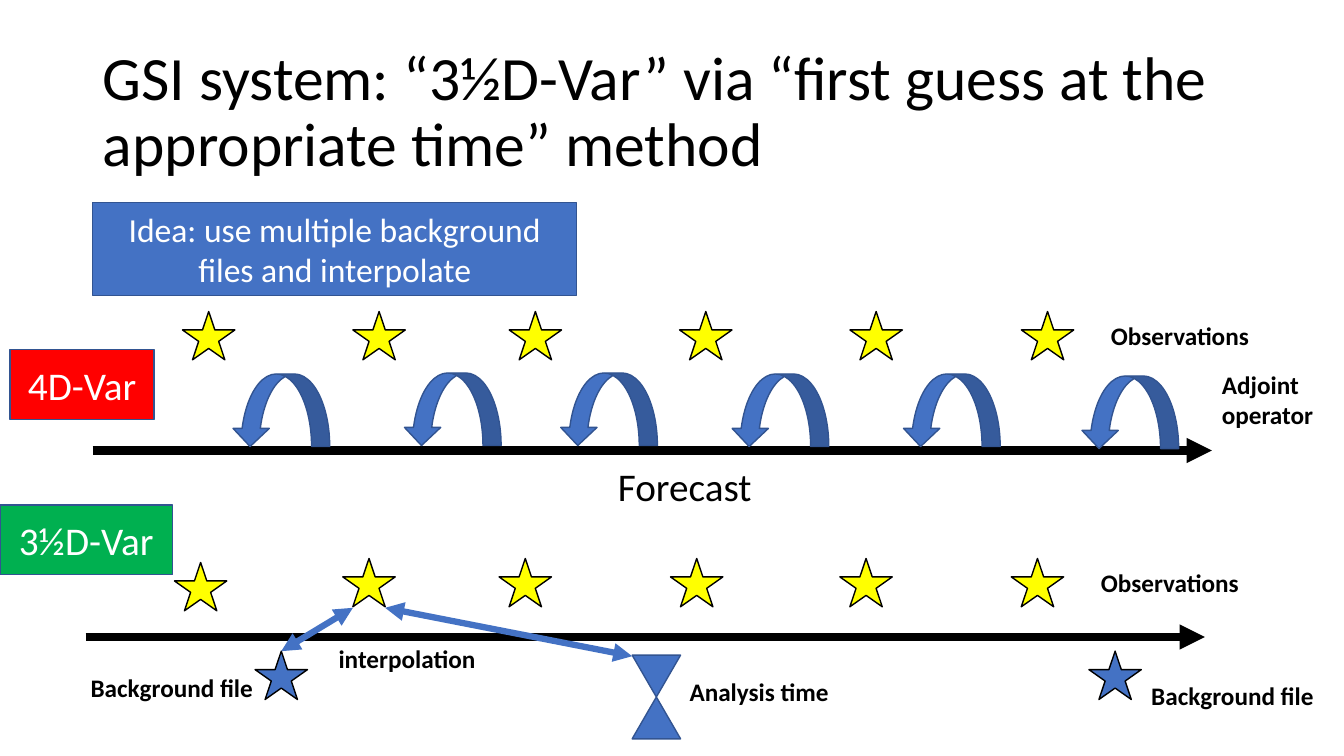
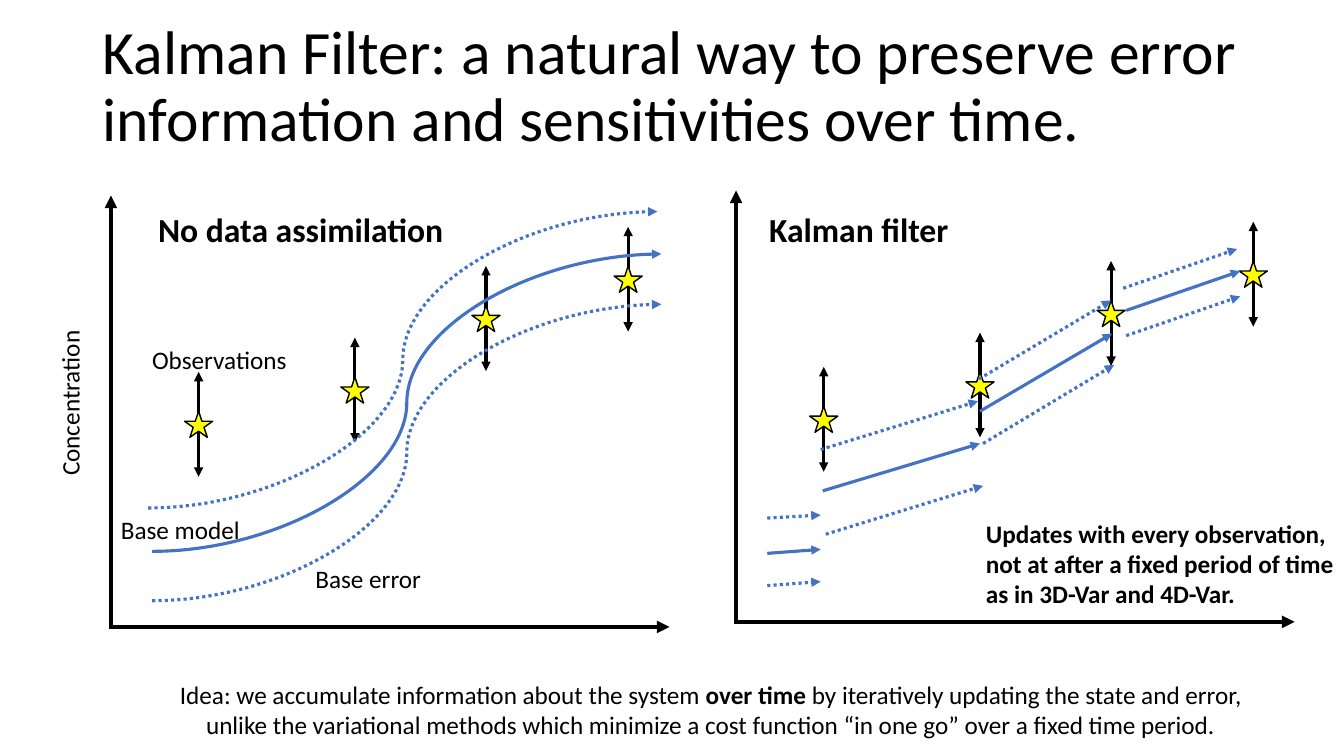
"""Build two slides on variational data assimilation and the Kalman filter."""
import pptx
import pptx.dml.color
import pptx.enum.dml
import pptx.enum.shapes
import pptx.enum.text
import pptx.oxml.ns
import pptx.util
from lxml import etree

Inches = pptx.util.Inches
Preset = pptx.enum.shapes.MSO_SHAPE
Connector = pptx.enum.shapes.MSO_CONNECTOR
Align = pptx.enum.text.PP_ALIGN
Anchor = pptx.enum.text.MSO_ANCHOR

FONT = "Calibri"
BLACK, WHITE, BLUE, NAVY = "000000", "FFFFFF", "4472C4", "325491"
YELLOW, RED, GREEN = "FFFF00", "FF0000", "00B050"

VAR_TITLE = "GSI system: “3½D-Var” via “first guess at the appropriate time” method"
VAR_BANNERS = [
    ("Idea: use multiple background files and interpolate", (0.92, 2.01, 4.8, 0.92), BLUE, 24),
    ("4D-Var", (0.1, 3.47, 1.43, 0.69), RED, 28),
    ("3½D-Var", (0, 5.01, 1.71, 0.69), GREEN, 28),
]
TIMELINES = [((0.92, 4.47), (12.02, 4.47)), ((0.85, 6.32), (11.95, 6.32))]
STAR_SIZE = (0.52, 0.48)
OBSERVATION_STARS = (
    [(left, 3.09) for left in (1.81, 3.5, 5.05, 6.74, 8.43, 10.13)]
    + [(1.73, 5.58)]
    + [(left, 5.54) for left in (3.4, 4.95, 6.65, 8.33, 10.03)]
)
BACKGROUND_STARS = [(2.53, 6.46), (10.8, 6.46)]
ADJOINT_ARROWS = [(2.3, 3.71), (4, 3.7), (5.55, 3.7), (7.25, 3.71), (8.95, 3.71), (10.72, 3.73)]
ANALYSIS_HOURGLASS = (6.27, 6.5, 0.48, 0.83)
INTERPOLATIONS = [((3.5, 6.03), (2.79, 6.46)), ((3.82, 6.03), (6.27, 6.51))]
VAR_LABELS = [
    (["Observations"], (10.92, 3.13, 1.58, 0.4), 18, True),
    (["Forecast"], (6.03, 4.54, 1.54, 0.57), 28, False),
    (["Adjoint", "operator"], (12.02, 3.61, 1.11, 0.71), 18, True),
    (["Observations"], (10.82, 5.58, 1.58, 0.4), 18, True),
    (["Analysis time"], (6.74, 6.66, 1.59, 0.4), 18, True),
    (["Background file"], (0.8, 6.62, 1.83, 0.4), 18, True),
    (["Background file"], (11.32, 6.7, 1.83, 0.4), 18, True),
    (["interpolation"], (3.26, 6.33, 1.57, 0.4), 18, True),
]

KALMAN_TITLE = ("Kalman Filter: a natural way to preserve error information "
                "and sensitivities over time.")
PANEL_OFFSETS = [(0, 0), (6.2, -0.05)]
AXES = [((1.1, 6.22), (1.1, 1.94)), ((1.08, 6.22), (6.64, 6.22))]
OBSERVATIONS = [(1.97, 4.21), (3.52, 3.87), (4.82, 3.16), (6.23, 2.77)]
ERROR_REACH = 0.52
SMALL_STAR = (0.28, 0.26)
BASE_CURVES = [
    ((1.51, 5.47), (6.56, 2.52), False),
    ((1.47, 5.04), (6.52, 2.1), True),
    ((1.51, 5.96), (6.56, 3.02), True),
]
FILTER_STEPS = [
    ((7.61, 5.49), (8.14, 5.45), False),
    ((8.16, 4.87), (9.72, 4.4), False),
    ((9.72, 4.08), (11.03, 3.31), False),
    ((11.17, 3.08), (12.3, 2.69), False),
    ((7.61, 5.14), (8.14, 5.11), True),
    ((7.61, 5.81), (8.14, 5.77), True),
    ((8.14, 4.46), (9.7, 3.98), True),
    ((8.19, 5.3), (9.75, 4.82), True),
    ((9.71, 3.76), (11.02, 2.98), True),
    ((9.75, 4.4), (11.05, 3.62), True),
    ((11.14, 2.86), (12.27, 2.47), True),
    ((11.17, 3.33), (12.3, 2.94), True),
]
KALMAN_LABELS = [
    (["Base model"], (1.1, 5.05, 1.39, 0.4), 18, False),
    (["Observations"], (1.41, 3.37, 1.55, 0.4), 18, False),
    (["Base error"], (3.03, 5.54, 1.26, 0.4), 18, False),
    (["No data assimilation"], (1.47, 2.02, 3.06, 0.5), 24, True),
    (["Kalman filter"], (7.53, 2.02, 2, 0.5), 24, True),
    (["Updates with every observation,", "not at after a fixed period of time",
      "as in 3D-Var and 4D-Var."], (9.68, 5.09, 3.69, 1.01), 18, True),
]
AXIS_LABEL = (["Concentration"], (-0.14, 3.79, 1.66, 0.4), 18, False)
SUMMARY_BOX = (1.47, 6.69, 11.16, 0.71)
SUMMARY = [
    ("Idea: we accumulate information about the system ", False),
    ("over time ", True),
    ("by iteratively updating the state and error, unlike the variational methods "
     "which minimize a cost function “in one go” over a fixed time period.", False),
]


def rgb(value):
    return pptx.dml.color.RGBColor.from_string(value)


def inches(values):
    return [Inches(value) for value in values]


def style(paragraph, size, color=BLACK, bold=None, align=Align.LEFT):
    paragraph.alignment = align
    font = paragraph.font
    font.name, font.size, font.bold = FONT, pptx.util.Pt(size), bold
    font.color.rgb = rgb(color)


def add_titled_slide(deck, title, top):
    slide = deck.slides.add_slide(deck.slide_layouts[5])
    heading = slide.shapes.title
    heading.left, heading.top, heading.width, heading.height = inches((0.92, top, 11.5, 1.45))
    heading.text_frame.text = title
    heading.text_frame.vertical_anchor = Anchor.MIDDLE
    paragraph = heading.text_frame.paragraphs[0]
    style(paragraph, 44)
    paragraph.line_spacing = 0.9
    return slide


def add_figure(slide, preset, box, fill, outline=NAVY):
    figure = slide.shapes.add_shape(preset, *inches(box))
    figure.shadow.inherit = False
    figure.fill.solid()
    figure.fill.fore_color.rgb = rgb(fill)
    figure.line.color.rgb = rgb(outline)
    figure.line.width = pptx.util.Pt(1)
    return figure


def add_star(slide, corner, size, fill=YELLOW):
    add_figure(slide, Preset.STAR_5_POINT, (*corner, *size), fill, BLACK)


def add_banner(slide, text, box, fill, size):
    frame = add_figure(slide, Preset.RECTANGLE, box, fill).text_frame
    frame.text = text
    frame.vertical_anchor = Anchor.MIDDLE
    style(frame.paragraphs[0], size, WHITE, align=Align.CENTER)


def add_label(slide, lines, box, size, bold):
    label = slide.shapes.add_textbox(*inches(box))
    frame = label.text_frame
    frame.word_wrap = False
    frame.auto_size = pptx.enum.text.MSO_AUTO_SIZE.SHAPE_TO_FIT_TEXT
    frame.text = "\n".join(lines)
    for paragraph in frame.paragraphs:
        style(paragraph, size, bold=bold)
    return label


def add_arrow(slide, start, end, color, width, kind=Connector.STRAIGHT, dotted=False, double=False):
    arrow = slide.shapes.add_connector(kind, *inches((*start, *end)))
    arrow.line.color.rgb = rgb(color)
    arrow.line.width = pptx.util.Pt(width)
    if dotted:
        arrow.line.dash_style = pptx.enum.dml.MSO_LINE.ROUND_DOT
    properties = arrow.element.spPr
    outline = properties.find(pptx.oxml.ns.qn("a:ln"))
    for tip in ("a:headEnd", "a:tailEnd") if double else ("a:tailEnd",):
        etree.SubElement(outline, pptx.oxml.ns.qn(tip), type="triangle")
    etree.SubElement(properties, pptx.oxml.ns.qn("a:effectLst"))


def build_var_slide(deck):
    slide = add_titled_slide(deck, VAR_TITLE, 0.4)
    for start, end in TIMELINES:
        add_arrow(slide, start, end, BLACK, 6)
    for banner in VAR_BANNERS:
        add_banner(slide, *banner)
    for corner in OBSERVATION_STARS:
        add_star(slide, corner, STAR_SIZE)
    for corner in ADJOINT_ARROWS:
        add_figure(slide, Preset.CURVED_UP_ARROW, (*corner, 0.97, 0.72), BLUE).rotation = 180
    add_figure(slide, Preset.FLOWCHART_COLLATE, ANALYSIS_HOURGLASS, BLUE)
    for corner in BACKGROUND_STARS:
        add_star(slide, corner, STAR_SIZE, BLUE)
    for start, end in INTERPOLATIONS:
        add_arrow(slide, start, end, BLUE, 4.5, double=True)
    for label in VAR_LABELS:
        add_label(slide, *label)


def add_panel(slide, dx, dy):
    for (x1, y1), (x2, y2) in AXES:
        add_arrow(slide, (x1 + dx, y1 + dy), (x2 + dx, y2 + dy), BLACK, 3)
    width, height = SMALL_STAR
    for x, y in OBSERVATIONS:
        x, y = x + dx, y + dy
        add_arrow(slide, (x, y - ERROR_REACH), (x, y + ERROR_REACH), BLACK, 2.25, double=True)
        add_star(slide, (x - width / 2, y - height / 2), SMALL_STAR)


def add_summary(slide):
    frame = slide.shapes.add_textbox(*inches(SUMMARY_BOX)).text_frame
    frame.word_wrap = True
    paragraph = frame.paragraphs[0]
    style(paragraph, 18, align=Align.CENTER)
    for text, bold in SUMMARY:
        run = paragraph.add_run()
        run.text, run.font.bold = text, bold


def build_kalman_slide(deck):
    slide = add_titled_slide(deck, KALMAN_TITLE, 0.15)
    for offset in PANEL_OFFSETS:
        add_panel(slide, *offset)
    for kind, trajectories in ((Connector.CURVE, BASE_CURVES), (Connector.STRAIGHT, FILTER_STEPS)):
        for start, end, dotted in trajectories:
            add_arrow(slide, start, end, BLUE, 2.25, kind, dotted)
    for label in KALMAN_LABELS:
        add_label(slide, *label)
    add_label(slide, *AXIS_LABEL).rotation = 270
    add_summary(slide)


def main():
    deck = pptx.Presentation()
    deck.slide_width, deck.slide_height = inches((13.33, 7.5))
    build_var_slide(deck)
    build_kalman_slide(deck)
    deck.save("out.pptx")


if __name__ == "__main__":
    main()
